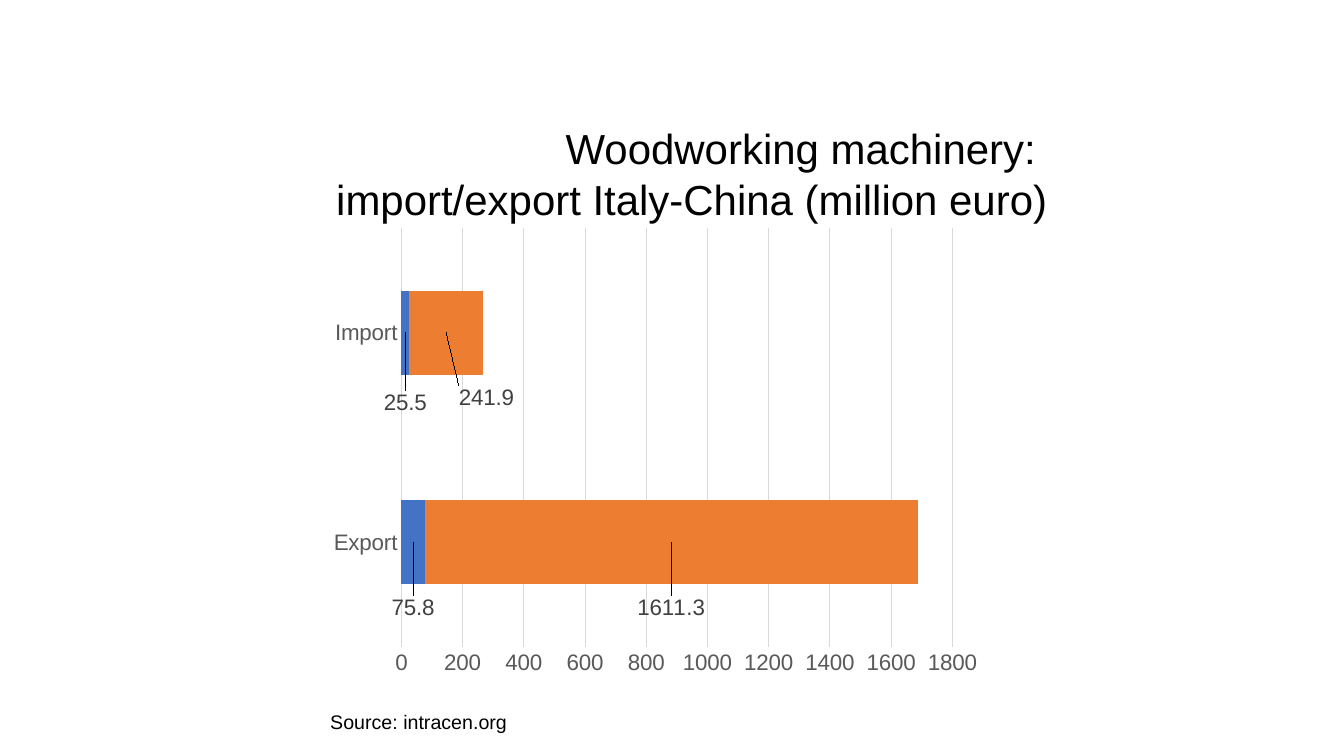
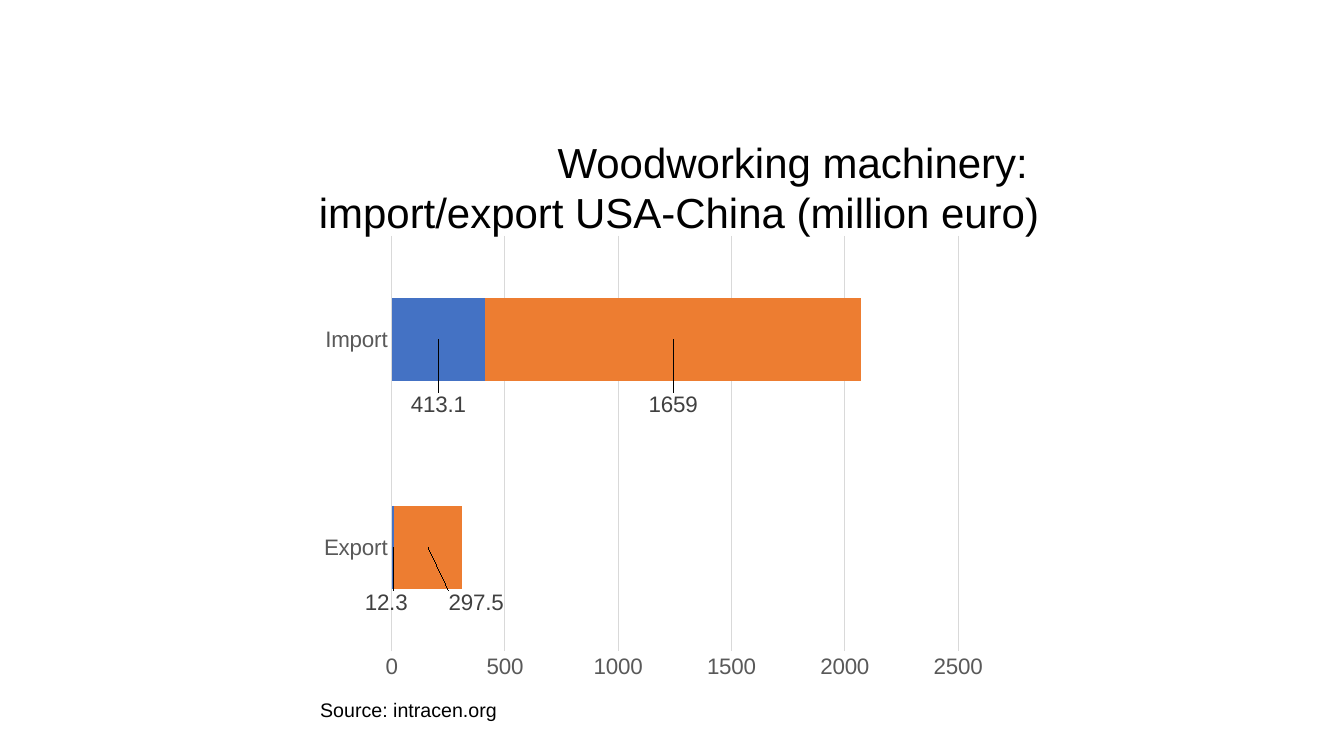
from dataclasses import dataclass

from lxml import etree
from pptx import Presentation
from pptx import util as u
from pptx.chart import data as chart_data
from pptx.dml import color
from pptx.enum import chart as chart_enum
from pptx.enum import text
from pptx.oxml import ns

PX = u.Inches(1) // 100
SLIDE_SIZE = (1334, 750)
TITLE_ONLY = 5
CATEGORIES = ("Export", "Import")
TITLE_START = "Woodworking machinery: "
SOURCE = "Source: intracen.org"


@dataclass(frozen=True)
class Theme:
    font: str = "Arial"
    ink: str = "000000"
    axis_ink: str = "595959"
    label_ink: str = "404040"
    grid: str = "D9D9D9"
    series: tuple[str, ...] = ("4472C4", "ED7D31")
    title_size: int = 30
    chart_size: int = 16
    source_size: int = 14
    grid_width: float = 0.75


THEME = Theme()


@dataclass(frozen=True)
class Box:
    left: int
    top: int
    width: int
    height: int

    def emu(self) -> tuple[int, ...]:
        return tuple(side * PX for side in (self.left, self.top, self.width, self.height))


@dataclass(frozen=True)
class Bar:
    value: float
    label_x: float = 0
    label_y: float = 0.14


@dataclass(frozen=True)
class TradeSlide:
    title_end: str
    title_box: Box
    chart_box: Box
    source_box: Box
    series: tuple[tuple[Bar, ...], ...]


TRADE_SLIDES = (
    TradeSlide(
        "import/export Italy-China (million euro)",
        Box(116, 117, 934, 111),
        Box(318, 217, 665, 462),
        Box(318, 699, 216, 34),
        (
            (Bar(75.8), Bar(25.5, 0, 0.15)),
            (Bar(1611.3), Bar(241.9, 0.06)),
        ),
    ),
    TradeSlide(
        "import/export USA-China (million euro)",
        Box(108, 130, 934, 111),
        Box(308, 225, 681, 458),
        Box(308, 687, 216, 34),
        (
            (Bar(12.3, -0.01, 0.12), Bar(413.1)),
            (Bar(297.5, 0.07, 0.12), Bar(1659)),
        ),
    ),
)


def rgb(value: str) -> color.RGBColor:
    return color.RGBColor.from_string(value)


def style_font(font, size: int, ink: str) -> None:
    font.name = THEME.font
    font.size = u.Pt(size)
    font.bold = False
    font.color.rgb = rgb(ink)


def add_run(paragraph, wording: str, size: int) -> None:
    run = paragraph.add_run()
    run.text = wording
    style_font(run.font, size, THEME.ink)


def add_title(slide, trade: TradeSlide) -> None:
    shape = slide.shapes.title
    shape.left, shape.top, shape.width, shape.height = trade.title_box.emu()
    frame = shape.text_frame
    frame.word_wrap = True
    frame.auto_size = text.MSO_AUTO_SIZE.NONE
    frame.vertical_anchor = text.MSO_ANCHOR.TOP
    paragraph = frame.paragraphs[0]
    paragraph.alignment = text.PP_ALIGN.RIGHT
    add_run(paragraph, TITLE_START, THEME.title_size)
    paragraph.add_line_break()
    add_run(paragraph, trade.title_end, THEME.title_size)


def add_source(slide, box: Box) -> None:
    frame = slide.shapes.add_textbox(*box.emu()).text_frame
    frame.word_wrap = True
    add_run(frame.paragraphs[0], SOURCE, THEME.source_size)


def style_line(line) -> None:
    line.color.rgb = rgb(THEME.grid)
    line.width = u.Pt(THEME.grid_width)


def style_axes(chart) -> None:
    for axis in (chart.category_axis, chart.value_axis):
        axis.major_tick_mark = chart_enum.XL_TICK_MARK.NONE
        axis.minor_tick_mark = chart_enum.XL_TICK_MARK.NONE
        style_font(axis.tick_labels.font, THEME.chart_size, THEME.axis_ink)
    style_line(chart.category_axis.format.line)
    chart.value_axis.format.line.fill.background()
    chart.value_axis.has_major_gridlines = True
    style_line(chart.value_axis.major_gridlines.format.line)


def move_label(label_element, bar: Bar) -> None:
    layout = etree.Element(ns.qn("c:layout"))
    manual = etree.SubElement(layout, ns.qn("c:manualLayout"))
    for axis, offset in (("x", bar.label_x), ("y", bar.label_y)):
        etree.SubElement(manual, ns.qn(f"c:{axis}"), val=str(offset))
    label_element.insert(1, layout)


def style_series(series, bars: tuple[Bar, ...], fill: str) -> None:
    series.format.fill.solid()
    series.format.fill.fore_color.rgb = rgb(fill)
    series.data_labels.show_value = True
    style_font(series.data_labels.font, THEME.chart_size, THEME.label_ink)
    for index in range(len(bars)):
        label = series.points[index].data_label
        style_font(label.font, THEME.chart_size, THEME.label_ink)
        label.position = chart_enum.XL_LABEL_POSITION.CENTER
    label_elements = series.data_labels._element.findall(ns.qn("c:dLbl"))
    for label_element, bar in zip(label_elements, bars):
        move_label(label_element, bar)


def add_trade_chart(slide, trade: TradeSlide) -> None:
    data = chart_data.CategoryChartData()
    data.categories = CATEGORIES
    for number, bars in enumerate(trade.series, 1):
        data.add_series(f"Series {number}", [bar.value for bar in bars])
    chart = slide.shapes.add_chart(
        chart_enum.XL_CHART_TYPE.BAR_STACKED, *trade.chart_box.emu(), data
    ).chart
    chart.has_legend = False
    chart.has_title = False
    style_font(chart.font, THEME.chart_size, THEME.ink)
    style_axes(chart)
    plot = chart.plots[0]
    plot.gap_width = 150
    plot.overlap = 100
    plot.vary_by_categories = False
    for series, bars, fill in zip(plot.series, trade.series, THEME.series):
        style_series(series, bars, fill)


def main() -> None:
    presentation = Presentation()
    presentation.slide_width, presentation.slide_height = (side * PX for side in SLIDE_SIZE)
    for trade in TRADE_SLIDES:
        slide = presentation.slides.add_slide(presentation.slide_layouts[TITLE_ONLY])
        add_trade_chart(slide, trade)
        add_source(slide, trade.source_box)
        add_title(slide, trade)
    presentation.save("out.pptx")


if __name__ == "__main__":
    main()
